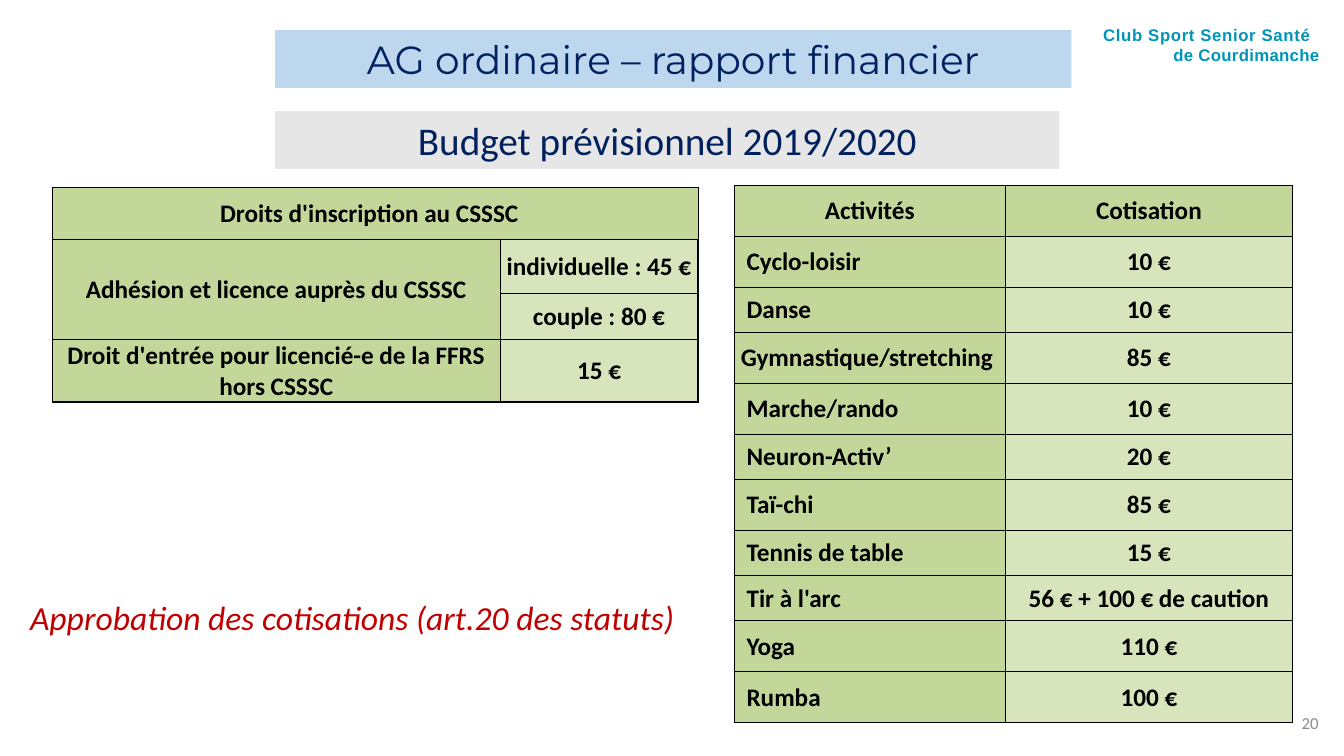
from dataclasses import dataclass
from typing import Optional

from lxml.etree import SubElement as Sub
from pptx import Presentation
from pptx.dml.color import RGBColor as Rgb
from pptx.enum.text import MSO_ANCHOR as Anchor, MSO_AUTO_SIZE as Fit, PP_ALIGN as Align
from pptx.oxml.ns import qn
from pptx.util import Pt


@dataclass(frozen=True)
class Theme:
    navy: str = "002060"
    sky: str = "BDD7EE"
    grey: str = "E7E6E6"
    teal: str = "0094B7"
    red: str = "C00000"
    dim: str = "8C8C8C"
    ink: str = "000000"
    green: str = "C4D79B"
    pale: str = "D8E4BC"
    font: str = "Calibri"
    head: str = "Montserrat"
    club: str = "Arial"
    big: float = 28
    mid: float = 24
    cell: float = 18
    small: float = 12
    thick: float = 1
    thin: float = 0.5


@dataclass(frozen=True)
class Line:
    text: str
    track: float = 0
    right: float = 0


@dataclass(frozen=True)
class Box:
    left: float
    top: float
    width: float
    height: float


@dataclass(frozen=True)
class Cell:
    row: int
    col: int
    text: str
    fill: str
    align: Align = Align.CENTER
    left: float = 0.72
    right: float = 0.72
    down: int = 1
    over: int = 1


T = Theme()


def write(frame, *lines: Line, size: float, color: str, font: str = T.font,
          align: Align = Align.LEFT, bold: bool = False, slant: bool = False) -> None:
    for i, line in enumerate(lines):
        par = frame.add_paragraph() if i else frame.paragraphs[0]
        par.alignment = align
        par._p.get_or_add_pPr().set("marR", str(Pt(line.right)))
        run = par.add_run()
        run.text = line.text
        if line.track:
            run._r.get_or_add_rPr().set("spc", str(round(line.track * 100)))
        run.font.name = font
        run.font.size = Pt(size)
        run.font.bold = bold
        run.font.italic = slant
        run.font.color.rgb = Rgb.from_string(color)


def place(shape, box: Box, fill: Optional[str] = None, anchor: Anchor = Anchor.TOP):
    shape.left, shape.top = Pt(box.left), Pt(box.top)
    shape.width, shape.height = Pt(box.width), Pt(box.height)
    frame = shape.text_frame
    frame.word_wrap = True
    frame.auto_size = Fit.NONE
    frame.vertical_anchor = anchor
    if fill:
        shape.fill.solid()
        shape.fill.fore_color.rgb = Rgb.from_string(fill)
    return frame


def label(slide, box: Box, fill: Optional[str] = None, anchor: Anchor = Anchor.TOP):
    return place(slide.shapes.add_textbox(0, 0, 0, 0), box, fill, anchor)


def edge(cell, row: int, col: int, rows: int, cols: int) -> None:
    bold = {"L": col == 0, "R": col == cols - 1,
            "T": row <= 1, "B": row in (0, rows - 1)}
    props = cell._tc.get_or_add_tcPr()
    for side, thick in bold.items():
        line = Sub(props, qn("a:ln" + side), w=str(Pt(T.thick if thick else T.thin)))
        Sub(Sub(line, qn("a:solidFill")), qn("a:srgbClr"), val=T.ink)


def grid(slide, left: float, top: float, cols: list[float], rows: list[float],
         cells: list[Cell]) -> None:
    table = slide.shapes.add_table(len(rows), len(cols), Pt(left), Pt(top),
                                   Pt(sum(cols)), Pt(sum(rows))).table
    table.first_row = table.horz_banding = False
    for col, width in zip(table.columns, cols):
        col.width = Pt(width)
    for row, height in zip(table.rows, rows):
        row.height = Pt(height)
    for r in range(len(rows)):
        for c in range(len(cols)):
            edge(table.cell(r, c), r, c, len(rows), len(cols))
    for item in cells:
        cell = table.cell(item.row, item.col)
        if item.down > 1 or item.over > 1:
            cell.merge(table.cell(item.row + item.down - 1, item.col + item.over - 1))
        cell.fill.solid()
        cell.fill.fore_color.rgb = Rgb.from_string(item.fill)
        cell.vertical_anchor = Anchor.MIDDLE
        cell.margin_left, cell.margin_right = Pt(item.left), Pt(item.right)
        cell.margin_top, cell.margin_bottom = Pt(0.72), Pt(0)
        write(cell.text_frame, Line(item.text), size=T.cell, color=T.ink,
              align=item.align, bold=True)


FEES = [
    ("Cyclo-loisir", "10 €"), ("Danse", "10 €"), ("Gymnastique/stretching", "85 €"),
    ("Marche/rando", "10 €"), ("Neuron-Activ’", "20 €"), ("Taï-chi", "85 €"),
    ("Tennis de table", "15 €"), ("Tir à l'arc", "56 € + 100 € de caution"),
    ("Yoga", "110 €"), ("Rumba", "100 €"),
]
SHORT = {"Danse", "Neuron-Activ’", "Tennis de table", "Tir à l'arc"}
WIDE = "Gymnastique/stretching"

RIGHTS = [
    Cell(0, 0, "Droits d'inscription au CSSSC", T.green, right=9, over=2),
    Cell(1, 0, "Adhésion et licence auprès du CSSSC", T.green, down=2),
    Cell(1, 1, "individuelle : 45 €", T.pale),
    Cell(2, 1, "couple : 80 €", T.pale),
    Cell(3, 0, "Droit d'entrée pour licencié-e de la FFRS hors CSSSC", T.green),
    Cell(3, 1, "15 €", T.pale),
]


def fees() -> list[Cell]:
    cells = [Cell(0, 0, "Activités", T.green), Cell(0, 1, "Cotisation", T.green)]
    for row, (name, price) in enumerate(FEES, 1):
        pad = 4.8 if name == WIDE else 8.9
        cells.append(Cell(row, 0, name, T.green, Align.LEFT, left=pad))
        cells.append(Cell(row, 1, price, T.pale))
    return cells


def main() -> None:
    deck = Presentation()
    deck.slide_width, deck.slide_height = Pt(960), Pt(540)
    slide = deck.slides.add_slide(deck.slide_layouts[5])

    write(label(slide, Box(896.4, 502, 52.6, 28.8), anchor=Anchor.MIDDLE), Line("20"),
          size=T.small, color=T.dim, align=Align.RIGHT)
    tall = [36.3] + [32.4 if name in SHORT else 36.3 for name, _ in FEES]
    grid(slide, 524.4, 132.4, [193.7, 205.2], tall, fees())
    grid(slide, 37.4, 133.9, [319.9, 141.3], [36.9, 38.5, 32.9, 45], RIGHTS)
    write(label(slide, Box(14.4, 422.6, 482.4, 36)),
          Line("Approbation des cotisations (art.20 des statuts)"),
          size=T.mid, color=T.red, slant=True)
    write(place(slide.shapes.title, Box(196.5, 21.6, 568.8, 41.2), T.sky),
          Line("AG ordinaire – rapport financier"),
          size=T.big, color=T.navy, font=T.head, align=Align.CENTER)
    write(label(slide, Box(774, 10.1, 175.7, 43.9), anchor=Anchor.MIDDLE),
          Line("Club Sport Senior Santé", track=0.45, right=6.6),
          Line("de Courdimanche", track=0.22),
          size=T.small, color=T.teal, font=T.club, align=Align.RIGHT, bold=True)
    write(label(slide, Box(196.5, 79.4, 560.2, 41.2), T.grey),
          Line("Budget prévisionnel 2019/2020"),
          size=T.big, color=T.navy, align=Align.CENTER)
    deck.save("out.pptx")


if __name__ == "__main__":
    main()
